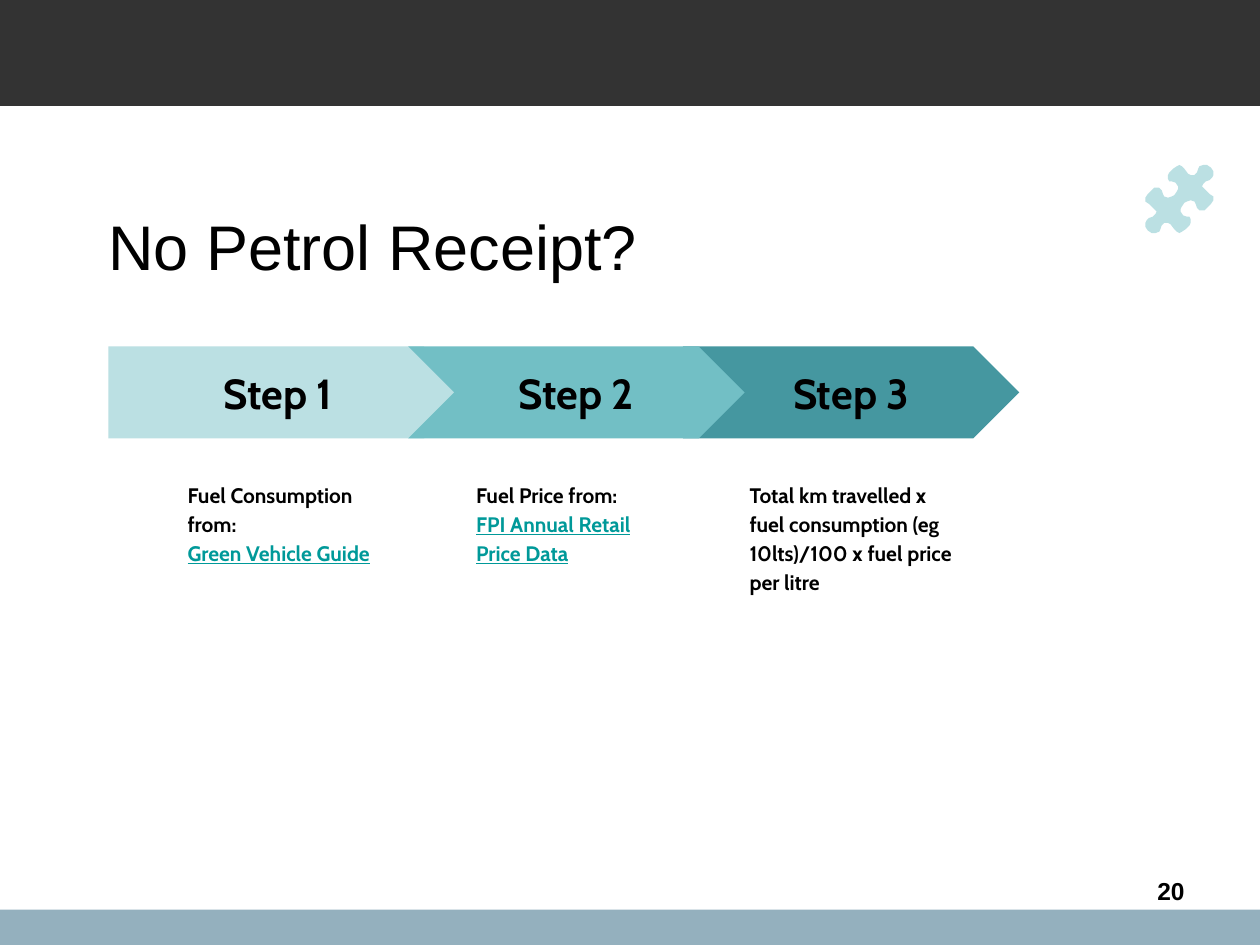
from dataclasses import dataclass

from pptx import Presentation
from pptx.dml.color import RGBColor
from pptx.enum.shapes import MSO_SHAPE
from pptx.enum.text import MSO_ANCHOR, PP_ALIGN
from pptx.util import Inches, Pt


@dataclass(frozen=True)
class Theme:
    """Colours, fonts and type sizes of the slide."""
    ink: str = "000000"
    header: str = "333333"
    footer: str = "94B0BE"
    link: str = "009999"
    pale: str = "BBE0E3"
    mid: str = "72BFC5"
    deep: str = "4597A0"
    heading_font: str = "Arial"
    body_font: str = "Cabin"
    title_size: int = 36
    step_size: int = 24
    number_size: int = 14
    body_size: int = 12


THEME = Theme()
STEP_TOP, STEP_HEIGHT = 2.75, 0.73
NOTE_TOP, NOTE_WIDTH, NOTE_HEIGHT = 3.7, 1.81, 1.56

STEPS = [
    ("Step 3", MSO_SHAPE.CHEVRON, 5.42, 2.67, THEME.deep, 5.85,
     "Total km travelled x fuel consumption (eg 10lts)/100 x fuel price per litre", None),
    ("Step 1", MSO_SHAPE.PENTAGON, 0.86, 2.87, THEME.pale, 1.39,
     "Fuel Consumption from:", "Green Vehicle Guide"),
    ("Step 2", MSO_SHAPE.CHEVRON, 3.24, 2.67, THEME.mid, 3.68,
     "Fuel Price from:", "FPI Annual Retail Price Data"),
]

PUZZLE_CENTRE = (936, 158)
PUZZLE_HALF = [
    (936, 131), (934, 132), (931, 134), (928, 137), (927, 139), (927, 142),
    (928, 144), (930, 144), (933, 145), (935, 148), (935, 150), (934, 152),
    (932, 155), (930, 156), (927, 157), (924, 156), (923, 154), (922, 151),
    (920, 149), (918, 149), (916, 149), (914, 151), (911, 154), (909, 157),
    (909, 160), (912, 162), (916, 166), (918, 168), (917, 170), (915, 172),
    (912, 173), (910, 175), (909, 177), (909, 180), (911, 183), (914, 185),
    (917, 185), (920, 184), (921, 182), (922, 179), (924, 177), (927, 177),
    (929, 178), (932, 182), (934, 184),
]


def set_font(p, name, size, color=THEME.ink, bold=False):
    """Format a whole paragraph."""
    p.font.name = name
    p.font.size = Pt(size)
    p.font.bold = bold
    p.font.color.rgb = RGBColor.from_string(color)


def paint(sp, color):
    """Give a shape a flat fill with no line or shadow."""
    sp.shadow.inherit = False
    sp.fill.solid()
    sp.fill.fore_color.rgb = RGBColor.from_string(color)
    sp.line.fill.background()


def set_insets(tf, inset):
    """Set the four text margins alike."""
    tf.margin_left = tf.margin_right = tf.margin_top = tf.margin_bottom = Inches(inset)


def add_block(s, kind, left, top, width, height, color):
    """Add a flat preset shape."""
    sp = s.shapes.add_shape(kind, Inches(left), Inches(top), Inches(width), Inches(height))
    paint(sp, color)
    return sp


def add_text_box(s, left, top, width, height, inset):
    """Add a wrapping text box and return its text frame."""
    tf = s.shapes.add_textbox(Inches(left), Inches(top), Inches(width), Inches(height)).text_frame
    tf.word_wrap = True
    set_insets(tf, inset)
    return tf


def set_title(s, text):
    """Place and format the title placeholder."""
    sp = s.shapes.title
    sp.left, sp.top, sp.width, sp.height = Inches(0.86), Inches(1.72), Inches(7.35), Inches(0.53)
    tf = sp.text_frame
    tf.text = text
    tf.vertical_anchor = MSO_ANCHOR.BOTTOM
    set_insets(tf, 0)
    p = tf.paragraphs[0]
    p.alignment = PP_ALIGN.LEFT
    set_font(p, THEME.heading_font, THEME.title_size)


def add_puzzle_piece(s):
    """Draw the puzzle piece from half its outline and that half turned 180 degrees."""
    cx, cy = PUZZLE_CENTRE
    points = PUZZLE_HALF + [(2 * cx - x, 2 * cy - y) for x, y in PUZZLE_HALF]
    builder = s.shapes.build_freeform(*points[0], scale=Inches(0.01))
    builder.add_line_segments(points[1:], close=True)
    paint(builder.convert_to_shape(), THEME.pale)


def add_step(s, label, kind, left, width, color, note_left, note, link):
    """Add a step arrow with its note and optional link below."""
    sp = add_block(s, kind, left, STEP_TOP, width, STEP_HEIGHT, color)
    tf = sp.text_frame
    tf.text = label
    tf.vertical_anchor = MSO_ANCHOR.MIDDLE
    set_insets(tf, 0.1)
    p = tf.paragraphs[0]
    p.alignment = PP_ALIGN.CENTER
    set_font(p, THEME.body_font, THEME.step_size, bold=True)

    tf = add_text_box(s, note_left, NOTE_TOP, NOTE_WIDTH, NOTE_HEIGHT, 0.1)
    tf.text = f"{note}\n{link}" if link else note
    for p, tint in zip(tf.paragraphs, (THEME.ink, THEME.link)):
        p.line_spacing = 1.15
        set_font(p, THEME.body_font, THEME.body_size, tint, bold=True)
    if link:
        tf.paragraphs[1].runs[0].font.underline = True


def add_page_number(s, number):
    """Add the page number above the footer bar."""
    tf = add_text_box(s, 8.86, 6.9, 0.64, 0.32, 0.05)
    tf.margin_right = Inches(0.1)
    tf.text = number
    p = tf.paragraphs[0]
    p.alignment = PP_ALIGN.RIGHT
    set_font(p, THEME.heading_font, THEME.number_size, bold=True)


def main():
    """Build and save the slide."""
    prs = Presentation()
    prs.slide_width, prs.slide_height = Inches(10), Inches(7.5)
    s = prs.slides.add_slide(prs.slide_layouts[5])
    add_block(s, MSO_SHAPE.RECTANGLE, 0, 7.22, 10, 0.28, THEME.footer)
    add_block(s, MSO_SHAPE.RECTANGLE, 0, 0, 10, 0.84, THEME.header)
    set_title(s, "No Petrol Receipt?")
    add_puzzle_piece(s)
    for step in STEPS:
        add_step(s, *step)
    add_page_number(s, "20")
    prs.save("out.pptx")


if __name__ == "__main__":
    main()
